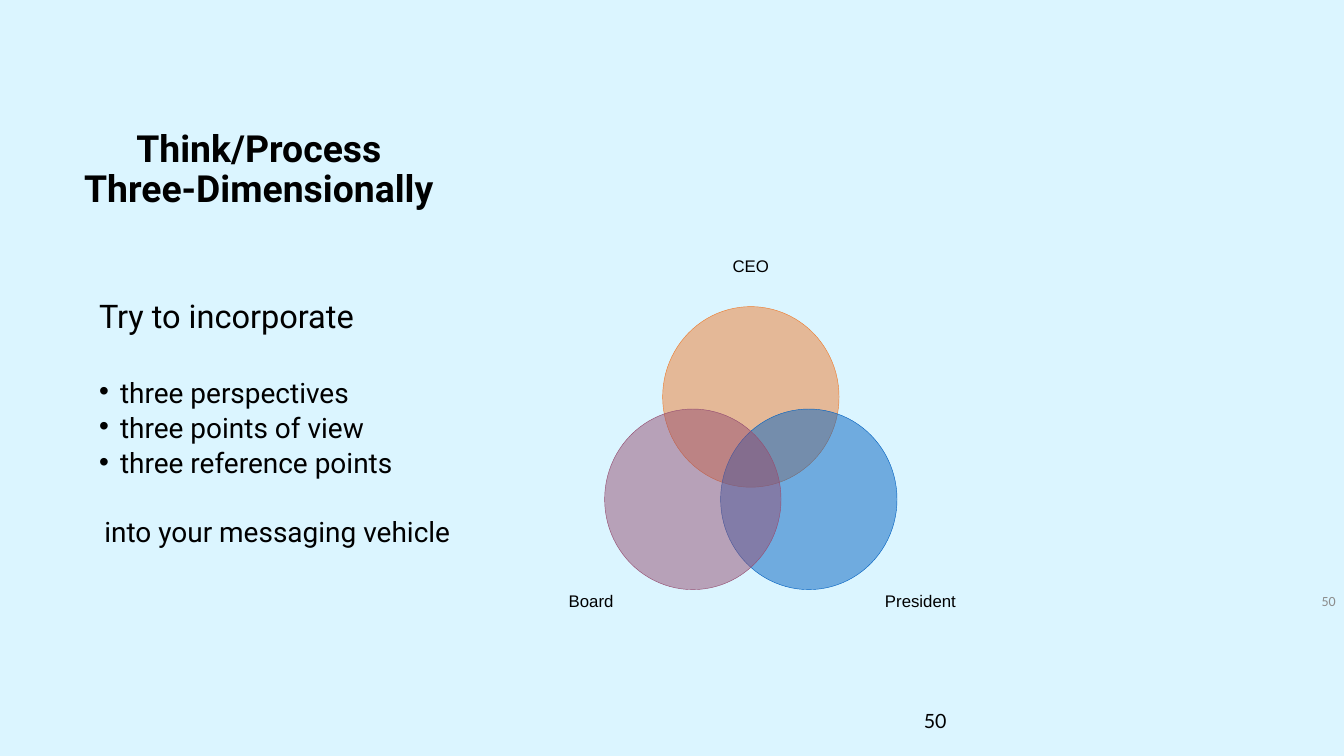
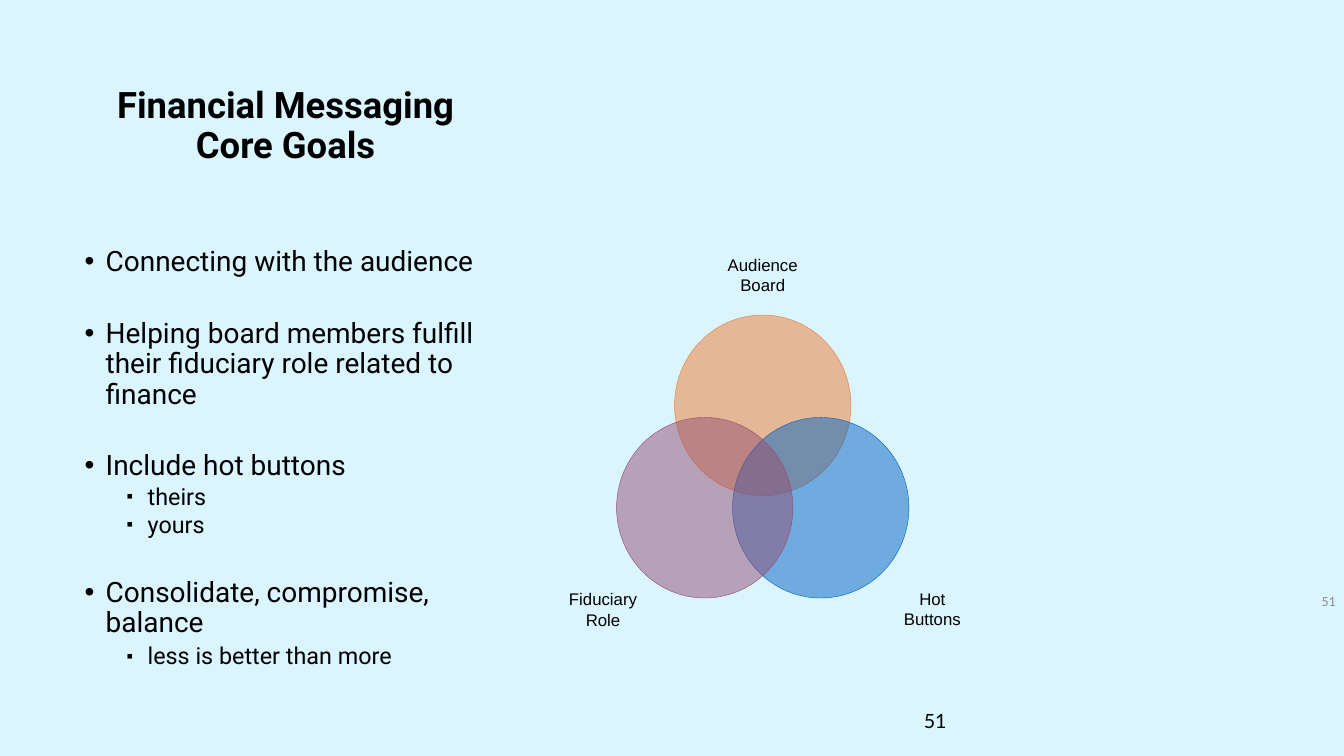
from lxml.etree import SubElement
from pptx import Presentation
from pptx.dml.color import RGBColor
from pptx.enum.shapes import MSO_SHAPE as Shape
from pptx.enum.text import MSO_ANCHOR as Anchor, MSO_AUTO_SIZE as AutoSize, PP_ALIGN as Align
from pptx.oxml.ns import qn
from pptx.util import Pt

COLORS = {"background": "DBF5FF", "text": "000000", "muted": "8C8C8C",
          "top": "ED7D31", "right": "0563C1", "left": "954F72"}

# Font formats by role
FONTS = {
    "title": {"name": "Roboto", "bold": True},
    "body": {"name": "Roboto"},
    "label": {"name": "Arial", "size": Pt(14.4)},
    "side number": {"name": "Calibri", "size": Pt(12)},
    "page number": {"name": "Lato", "size": Pt(16.8)},
}

# Paragraph levels: size, left margin, first-line indent, bullet, bullet size in %
LEVELS = {
    "lead": (27.9, 0, 0, None, 100),
    "bullet": (24, 18, -18, "•", 100),
    "sub": (20, 54, -18, "▪", 79),
    "closing": (24, 4.5, 0, None, 100),
}

# Venn circles and labels, as offsets from the top circle's corner
CIRCLE_W, CIRCLE_H = 151.2, 154.8
LABEL_W, LABEL_H = 80, 38.9
CIRCLES = {"top": (0, 0), "right": (49.7, 87.8), "left": (-49.7, 87.8)}
LABELS = {"top": (35.6, -54), "right": (181, 232.6), "left": (-101.3, 232.9)}

# Body lines: level, text, line spacing, space before
SLIDES = [
    {
        "number": "50",
        "title": "Think/Process\vThree-Dimensionally",
        "title box": (64, 108, 316, 101), "title size": 32,
        "body box": (77.8, 259.4, 349, 223),
        "body": [
            ("lead", "Try to incorporate", 0.7, 0),
            ("bullet", "three perspectives", 0.7, 43),
            ("bullet", "three points of view", 0.7, 10),
            ("bullet", "three reference points", 0.7, 10),
            ("closing", "into your messaging vehicle", 0.7, 39),
        ],
        "venn": (568, 262.8),
        "labels": {"top": "CEO", "right": "President", "left": "Board"},
    },
    {
        "number": "51",
        "title": "Financial Messaging\vCore Goals",
        "title box": (76.3, 71.3, 337, 87), "title size": 31.2,
        "body box": (65.5, 208.8, 379, 317),
        "body": [
            ("bullet", "Connecting with the audience", 0.9, 0),
            ("bullet", "Helping board members fulfill their fiduciary role related to finance", 0.9, 35.5),
            ("bullet", "Include hot buttons", 0.9, 35.5),
            ("sub", "theirs", 0.8, 5),
            ("sub", "yours", 0.8, 5),
            ("bullet", "Consolidate, compromise, balance", 0.9, 34.5),
            ("sub", "less is better than more", 0.9, 5),
        ],
        "venn": (578.2, 270),
        "labels": {"top": "Audience\nBoard", "right": "Hot\nButtons", "left": "Fiduciary\nRole"},
    },
]


def format_text(paragraph, role, color="text", **extra):
    for run in paragraph.runs:
        for attribute, value in {**FONTS[role], **extra}.items():
            setattr(run.font, attribute, value)
        run.font.color.rgb = RGBColor.from_string(COLORS[color])


def add_text(shapes, box, text, role, align=Align.LEFT, anchor=Anchor.TOP, color="text"):
    frame = shapes.add_textbox(*map(Pt, box)).text_frame
    frame.text = text
    frame.word_wrap = True
    frame.vertical_anchor = anchor
    for paragraph in frame.paragraphs:
        paragraph.alignment = align
        format_text(paragraph, role, color)
    return frame


deck = Presentation()
deck.slide_width, deck.slide_height = Pt(1152), Pt(648)
backdrop = deck.slide_master.background.fill
backdrop.solid()
backdrop.fore_color.rgb = RGBColor.from_string(COLORS["background"])
title_only = deck.slide_layouts[5]

for content in SLIDES:
    slide = deck.slides.add_slide(title_only)

    # Title
    title = slide.shapes.title
    for side, value in zip(("left", "top", "width", "height"), content["title box"]):
        setattr(title, side, Pt(value))
    heading = title.text_frame
    heading.text = content["title"]
    heading.auto_size = AutoSize.NONE
    heading.vertical_anchor = Anchor.TOP
    heading.paragraphs[0].alignment = Align.CENTER
    heading.paragraphs[0].line_spacing = 0.9
    format_text(heading.paragraphs[0], "title", size=Pt(content["title size"]))

    # Slide numbers: at the right edge and at the foot
    add_text(slide.shapes, (936, 500.4, 216, 28.8), content["number"], "side number",
             Align.RIGHT, Anchor.MIDDLE, "muted")
    add_text(slide.shapes, (784.8, 604, 180, 43.2), content["number"], "page number")

    # Venn diagram
    venn = slide.shapes.add_group_shape().shapes
    venn_x, venn_y = content["venn"]
    for place, (dx, dy) in CIRCLES.items():
        circle = venn.add_shape(Shape.OVAL, Pt(venn_x + dx), Pt(venn_y + dy),
                                Pt(CIRCLE_W), Pt(CIRCLE_H))
        circle.shadow.inherit = False
        circle.fill.solid()
        for paint in (circle.fill.fore_color, circle.line.color):
            paint.rgb = RGBColor.from_string(COLORS[place])
        circle.line.width = Pt(0.37)
        tint = circle.fill._xPr.find(qn("a:solidFill"))[0]
        SubElement(tint, qn("a:alpha"), val="50000")

        dx, dy = LABELS[place]
        label = add_text(venn, (venn_x + dx, venn_y + dy, LABEL_W, LABEL_H),
                         content["labels"][place], "label", Align.CENTER, Anchor.MIDDLE)
        for margin in ("left", "top", "right", "bottom"):
            setattr(label, f"margin_{margin}", 0)

    # Body text
    body = add_text(slide.shapes, content["body box"],
                    "\n".join(line[1] for line in content["body"]), "body")
    for paragraph, (level, _, spacing, before) in zip(body.paragraphs, content["body"]):
        size, margin, indent, bullet, bullet_size = LEVELS[level]
        paragraph.line_spacing = spacing
        paragraph.space_before = Pt(before)
        format_text(paragraph, "body", size=Pt(size))
        properties = paragraph._p.get_or_add_pPr()
        properties.set("marL", str(Pt(margin)))
        properties.set("indent", str(Pt(indent)))
        if bullet:
            SubElement(properties, qn("a:buSzPct"), val=str(bullet_size * 1000))
            SubElement(properties, qn("a:buFont"), typeface="Arial")
            SubElement(properties, qn("a:buChar"), char=bullet)

deck.save("out.pptx")
